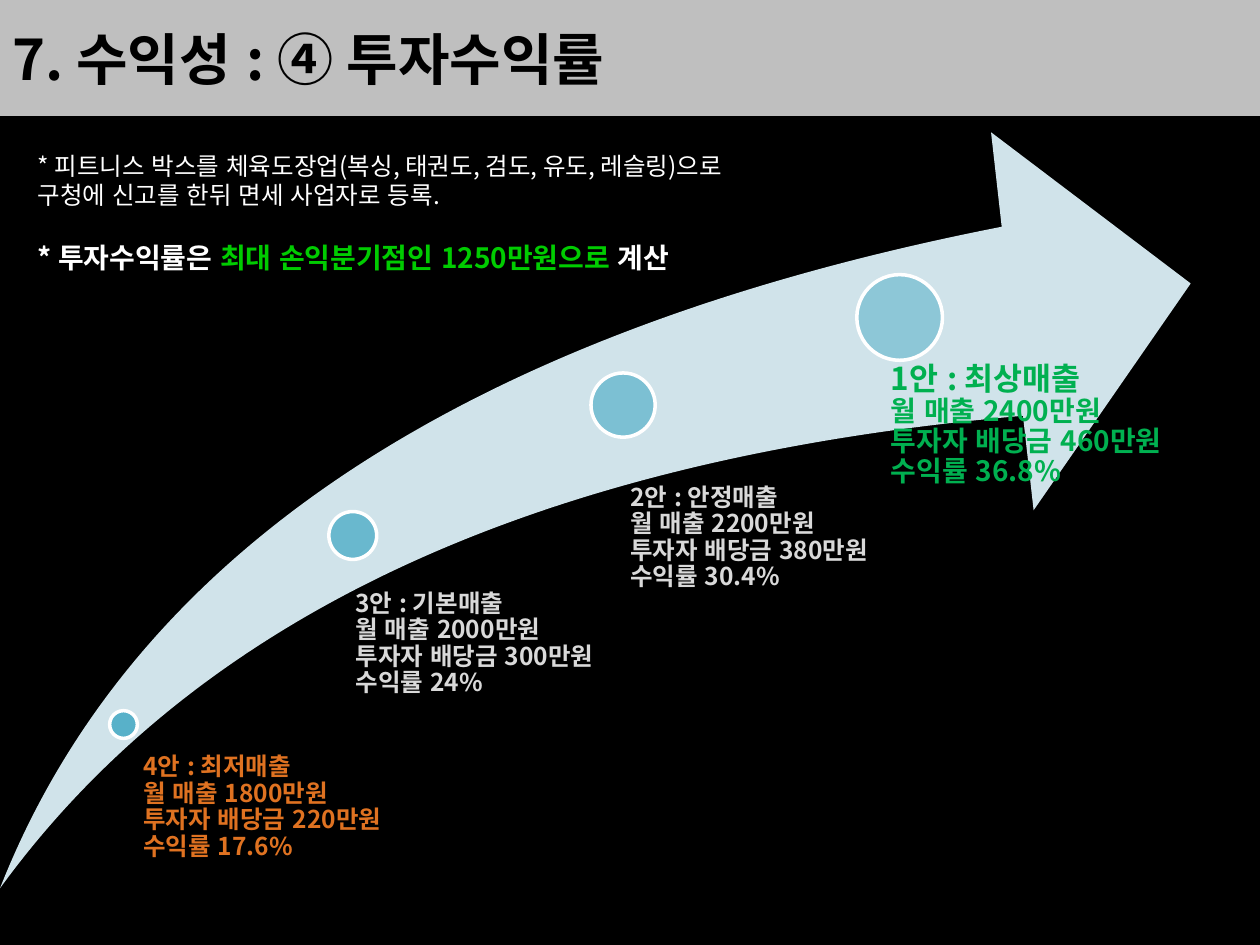
from copy import deepcopy

from lxml.etree import SubElement
from pptx import Presentation
from pptx.dml.color import RGBColor
from pptx.enum.lang import MSO_LANGUAGE_ID as Language
from pptx.enum.shapes import MSO_SHAPE as Shape
from pptx.enum.text import MSO_ANCHOR as Anchor, PP_ALIGN as Align
from pptx.oxml.ns import qn
from pptx.util import Inches, Pt

THEME = {
    "font": "Noto Sans CJK KR",
    "background": "000000", "bar": "BFBFBF", "title": "000000",
    "arrow": "D0E3EA", "marker": "4BACC6", "outline": "FFFFFF",
    "text": "FFFFFF", "accent": "00CC00",
    "lowest": "DF7221", "middle": "D9D9D9", "best": "00B050",
    "title_size": 32, "best_size": 18, "large_size": 16, "body_size": 14,
}

presentation = Presentation()
presentation.slide_width, presentation.slide_height = Inches(10), Inches(7.5)
COLUMN = presentation.slide_width / 10
ROW = presentation.slide_height / 7.5
slide = presentation.slides.add_slide(presentation.slide_layouts[6])
slide.background.fill.solid()
slide.background.fill.fore_color.rgb = RGBColor.from_string(THEME["background"])


def add_shape(shapes, kind, left, top, width, height, color):
    """Add a filled shape without line or shadow, placed in columns and rows."""
    shape = shapes.add_shape(kind, int(left * COLUMN), int(top * ROW),
                             int(width * COLUMN), int(height * ROW))
    shape.shadow.inherit = False
    shape.fill.solid()
    shape.fill.fore_color.rgb = RGBColor.from_string(THEME[color])
    shape.line.fill.background()
    return shape


def write(shape, parts, bold=True):
    """Write (text, size, color) parts into one paragraph; newlines break lines."""
    shape.text_frame.word_wrap = True
    paragraph = shape.text_frame.paragraphs[0]
    paragraph.alignment = Align.LEFT
    for text, size, color in parts:
        for line_number, line in enumerate(text.split("\n")):
            if line_number:
                paragraph.add_line_break()
                # The break keeps the size of the line it ends
                paragraph._p[-1].insert(0, deepcopy(run.font._element))
            if not line:
                continue
            run = paragraph.add_run()
            run.text = line
            run.font.size, run.font.bold = Pt(THEME[size]), bold
            run.font.name = THEME["font"]
            run.font.language_id = Language.KOREAN
            run.font.color.rgb = RGBColor.from_string(THEME[color])
            SubElement(run.font._element, qn("a:ea"), typeface=THEME["font"])
    return paragraph


# Title bar
bar = add_shape(slide.shapes, Shape.RECTANGLE, 0, 0, 10, 0.92, "bar")
bar.text_frame.vertical_anchor = Anchor.MIDDLE
write(bar, [("7. 수익성 : ④ 투자수익률", "title_size", "title")])

# Rising arrow
diagram = slide.shapes.add_group_shape().shapes
arrow = add_shape(diagram, Shape.SWOOSH_ARROW, 0, 1.05, 9.45, 6, "arrow")
arrow.adjustments[0] = arrow.adjustments[1] = 0.25

# Plans: name, sales, dividend, return, marker (left, top, size), label box, color
PLANS = [
    ("4안 : 최저매출", 1800, 220, "17.6", (0.87, 5.64, 0.22), (1.02, 5.99, 2.59, 1.12), "lowest"),
    ("3안 : 기본매출", 2000, 300, "24", (2.61, 4.06, 0.38), (2.62, 4.69, 2.53, 2.3), "middle"),
    ("2안 : 안정매출", 2200, 380, "30.4", (4.69, 2.96, 0.51), (4.73, 3.85, 2.31, 2.82), "middle"),
    ("1안 : 최상매출", 2400, 460, "36.8", (6.8, 2.18, 0.68), (6.71, 2.88, 2.86, 3.36), "best"),
]
for index, (name, sales, dividend, rate, marker, box, color) in enumerate(PLANS):
    # Marker, fading from 90 % to 50 % opacity
    left, top, size = marker
    circle = add_shape(diagram, Shape.OVAL, left, top, size, size, "marker")
    circle.line.color.rgb = RGBColor.from_string(THEME["outline"])
    circle.line.width = Pt(2)
    fill_color = circle.fill._xPr.find(qn("a:solidFill"))[0]
    opacity = round(90 - 40 * index / (len(PLANS) - 1))
    SubElement(fill_color, qn("a:alpha"), val=str(opacity * 1000))

    # Label, indented in proportion to its marker
    left, top, width, height = box
    label = diagram.add_textbox(int(left * COLUMN), int(top * ROW),
                                int(width * COLUMN), int(height * ROW))
    frame = label.text_frame
    frame.margin_left = int(0.53 * size * COLUMN)
    frame.margin_top = frame.margin_right = frame.margin_bottom = 0
    name_size, detail_size = (("best_size", "large_size") if color == "best"
                              else ("body_size", "body_size"))
    details = f"월 매출 {sales}만원\n투자자 배당금 {dividend}만원\n수익률 {rate}%"
    paragraph = write(label, [(name + "\n", name_size, color), (details, detail_size, color)])
    paragraph.line_spacing = 0.9

# Notes above the arrow
NOTES = [
    ((0.2, 1.15, 6.18, 0.57), False, [
        ("* 피트니스 박스를 체육도장업(복싱, 태권도, 검도, 유도, 레슬링)으로 "
         "구청에 신고를 한뒤 면세 사업자로 등록.", "body_size", "text")]),
    ((0.2, 1.86, 5.67, 0.37), True, [
        ("* 투자수익률은 ", "large_size", "text"),
        ("최대 손익분기점인 1250만원으로 ", "large_size", "accent"),
        ("계산", "large_size", "text")]),
]
for (left, top, width, height), bold, parts in NOTES:
    note = slide.shapes.add_textbox(int(left * COLUMN), int(top * ROW),
                                    int(width * COLUMN), int(height * ROW))
    write(note, parts, bold)

presentation.save("out.pptx")
